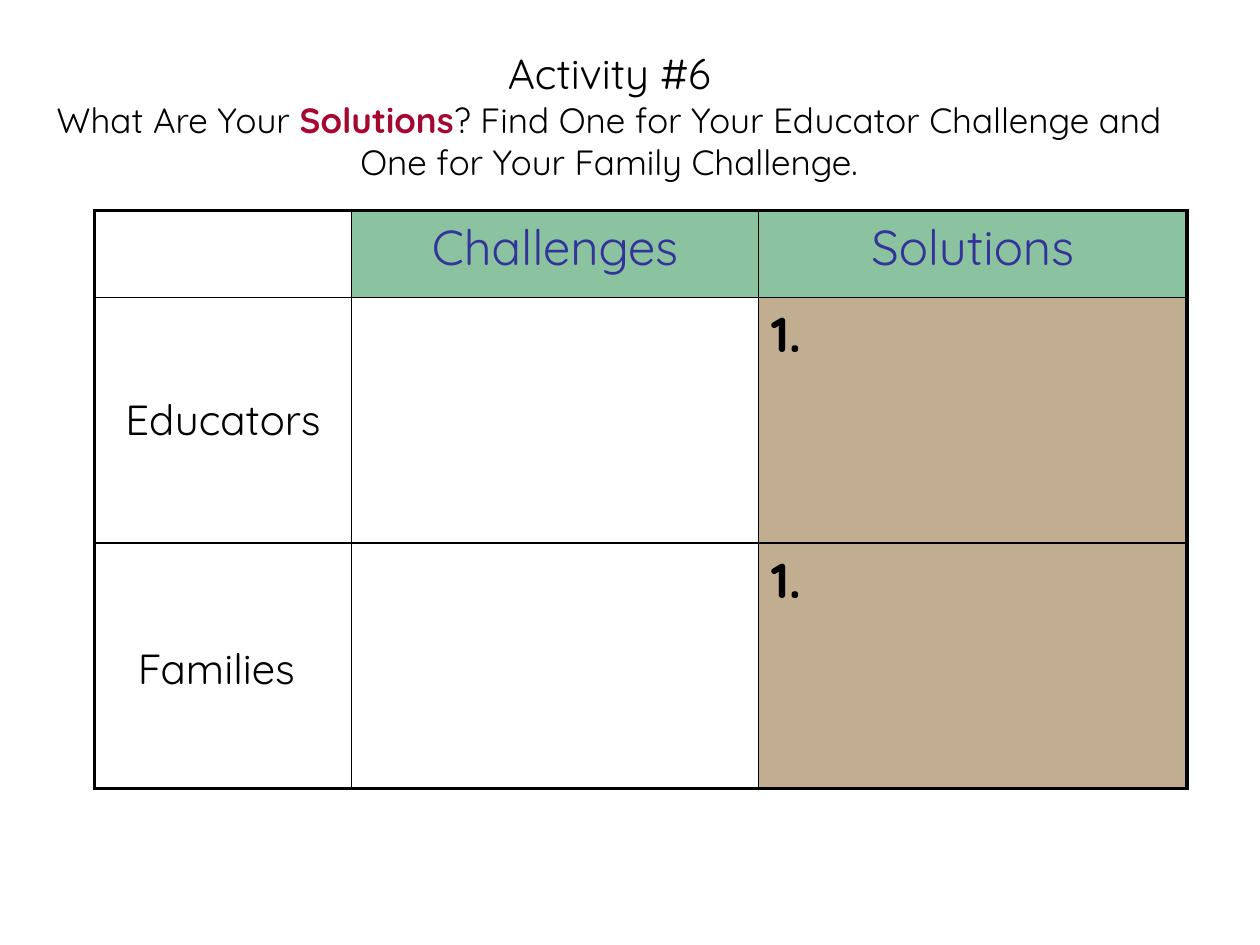
from lxml import etree
from pptx import Presentation
from pptx import util as u
from pptx.dml.color import RGBColor
from pptx.enum import text
from pptx.oxml import ns

FONT = "Quicksand"
COLORS = {
    "ink": "000000",
    "heading": "333399",
    "accent": "A40831",
    "gray": "808080",
    "green": "8BC2A0",
    "tan": "C1AE90",
}
OUTER, INNER = 2.25, 1  # border widths in points


def add_span(para, words, size, color="ink", bold=False):
    span = para.add_run()
    span.text = words
    span.font.name = FONT
    span.font.size = u.Pt(size)
    span.font.bold = bold
    span.font.color.rgb = RGBColor.from_string(COLORS[color])


def add_title(page):
    box = page.shapes.add_textbox(
        u.Inches(0.17), u.Inches(0.33), u.Inches(9.33), u.Inches(1.58))
    frame = box.text_frame
    frame.word_wrap = True
    frame.vertical_anchor = text.MSO_ANCHOR.TOP
    para = frame.paragraphs[0]
    para.alignment = text.PP_ALIGN.CENTER
    add_span(para, "Activity #6", 24)
    para.add_line_break()
    add_span(para, "What Are Your ", 20)
    add_span(para, "Solutions", 20, "accent", True)
    add_span(para, "? Find One for Your Educator Challenge and "
                   "One for Your Family Challenge.", 20)


def set_borders(cell, widths):
    properties = cell._tc.get_or_add_tcPr()
    for side, width in zip("LRTB", widths):
        line = etree.SubElement(
            properties, ns.qn(f"a:ln{side}"), w=str(u.Pt(width)))
        fill = etree.SubElement(line, ns.qn("a:solidFill"))
        etree.SubElement(fill, ns.qn("a:srgbClr"), val=COLORS["ink"])


def fill_cell(cell, color):
    if color:
        cell.fill.solid()
        cell.fill.fore_color.rgb = RGBColor.from_string(COLORS[color])
    else:
        cell.fill.background()


def write_cell(cell, spans, centered, middle):
    para = cell.text_frame.paragraphs[0]
    if centered:
        para.alignment = text.PP_ALIGN.CENTER
    if middle:
        cell.vertical_anchor = text.MSO_ANCHOR.MIDDLE
    for span in spans:
        add_span(para, *span)


def add_solutions_table(page):
    widths, heights = [2.04, 3.23, 3.4], [0.69, 1.95, 1.95]
    number = [("1.", 28, "ink", True)]
    rows = [
        [[], [("Challenges", 28, "heading")], [("Solutions", 28, "heading")]],
        [[("Educators", 24)], [], number],
        [[("Families", 24), (" ", 28, "gray")], [], number],
    ]
    table = page.shapes.add_table(
        len(rows), len(widths), u.Inches(0.75), u.Inches(1.67),
        u.Inches(sum(widths)), u.Inches(sum(heights))).table
    table.first_row = table.horz_banding = False
    for column, width in zip(table.columns, widths):
        column.width = u.Inches(width)
    for row, height in zip(table.rows, heights):
        row.height = u.Inches(height)

    last_row, last_col = len(rows) - 1, len(widths) - 1
    for r, row in enumerate(rows):
        for c, spans in enumerate(row):
            cell = table.cell(r, c)
            # Thick frame around the table, thin lines inside
            edges = (c == 0, c == last_col, r == 0, r == last_row)
            set_borders(cell, [OUTER if edge else INNER for edge in edges])
            # Green headings, tan answers in the last column
            if r == 0:
                color = "green" if c else None
            else:
                color = "tan" if c == last_col else None
            fill_cell(cell, color)
            write_cell(cell, spans, r == 0 or c == 0, r > 0 and c == 0)


def main():
    deck = Presentation()
    deck.slide_width, deck.slide_height = u.Inches(10), u.Inches(7.5)
    page = deck.slides.add_slide(deck.slide_layouts[6])
    add_solutions_table(page)
    add_title(page)
    deck.save("out.pptx")


if __name__ == "__main__":
    main()
